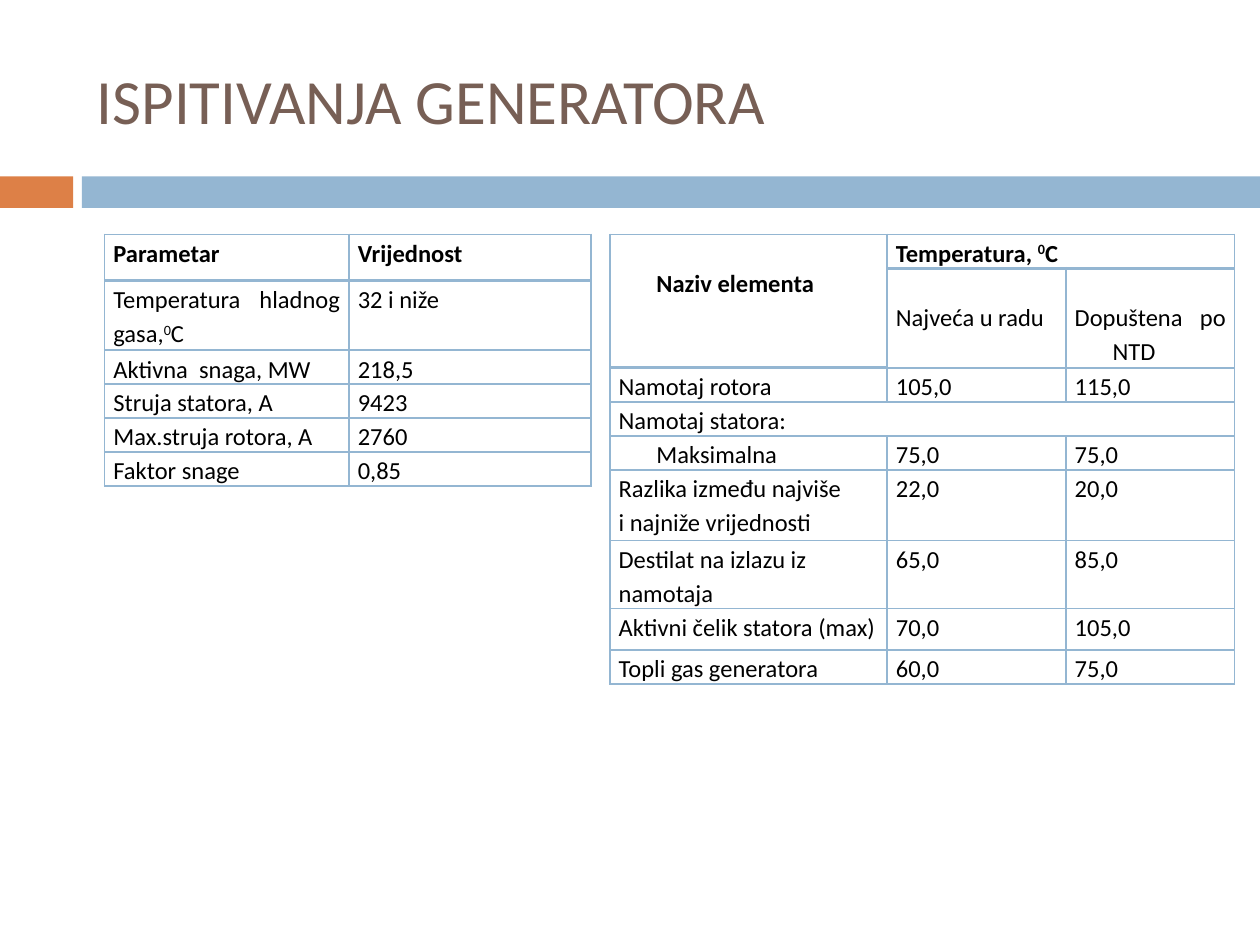
"""Build the slide with two tables of generator test results."""
from lxml import etree
from pptx import Presentation
from pptx.dml.color import RGBColor
from pptx.enum.shapes import MSO_SHAPE
from pptx.enum.text import MSO_ANCHOR, PP_ALIGN
from pptx.oxml.ns import qn
from pptx.util import Inches, Pt

RECTANGLE = MSO_SHAPE.RECTANGLE
MIDDLE = MSO_ANCHOR.MIDDLE
LEFT, JUSTIFY = PP_ALIGN.LEFT, PP_ALIGN.JUSTIFY
ORANGE = RGBColor(0xDD, 0x80, 0x47)
BLUE = RGBColor(0x94, 0xB6, 0xD2)
BROWN = RGBColor(0x77, 0x5F, 0x55)
BLACK = RGBColor(0, 0, 0)
FONT = "Calibri"

PARAMETERS = [
    ["Parametar", "Vrijednost"],
    ["Temperatura hladnog gasa,^0^C", "32 i niže"],
    ["Aktivna  snaga, MW", "218,5"],
    ["Struja statora, A", "9423"],
    ["Max.struja rotora, A", "2760"],
    ["Faktor snage", "0,85"],
]
TEMPERATURES = [
    ["Naziv elementa", "Temperatura, ^0^C", ""],
    ["", "Najveća u radu", "Dopuštena po NTD"],
    ["Namotaj rotora", "105,0", "115,0"],
    ["Namotaj statora:", "", ""],
    ["Maksimalna", "75,0", "75,0"],
    ["Razlika između najviše\ni najniže vrijednosti", "22,0", "20,0"],
    ["Destilat na izlazu iz namotaja", "65,0", "85,0"],
    ["Aktivni čelik statora (max)", "70,0", "105,0"],
    ["Topli gas generatora", "60,0", "75,0"],
]
INDENTED = {"Naziv elementa", "Maksimalna"}
LOWERED = {"Naziv elementa", "Najveća u radu", "Dopuštena po NTD"}
LEFT_ALIGNED = {TEMPERATURES[5][0], TEMPERATURES[6][0]}
UNINDENTED = LEFT_ALIGNED | {PARAMETERS[1][0]}


def write_cell(cell, text, bold, border_widths):
    properties = cell._tc.get_or_add_tcPr()
    for side, width in zip("LRTB", border_widths):
        line = etree.SubElement(properties, qn(f"a:ln{side}"), w=str(Pt(width)))
        line_fill = etree.SubElement(line, qn("a:solidFill"))
        etree.SubElement(line_fill, qn("a:srgbClr"), val=str(BLUE))
    cell.fill.background()
    cell.margin_left = cell.margin_right = Inches(0.07)
    cell.margin_top = Inches(0.24 if text in LOWERED else 0)
    cell.margin_bottom = 0
    if not text:
        return
    cell.text_frame.text = text.replace("^", "")
    for paragraph, content in zip(cell.text_frame.paragraphs, text.split("\n")):
        paragraph.alignment = LEFT if text in LEFT_ALIGNED else JUSTIFY
        paragraph.line_spacing = 1.15
        if text not in UNINDENTED:
            indent = 0 if text in INDENTED else Inches(-0.3)
            paragraph_properties = paragraph._p.get_or_add_pPr()
            paragraph_properties.set("marL", str(Inches(0.3)))
            paragraph_properties.set("indent", str(indent))
        paragraph.clear()
        for index, part in enumerate(content.split("^")):
            run = paragraph.add_run()
            run.text = part
            run.font.name = FONT
            run.font.size = Pt(14)
            run.font.bold = bold
            run.font.color.rgb = BLACK
            if index % 2:
                run._r.get_or_add_rPr().set("baseline", "30000")


def add_grid(slide, left, widths, heights, rows, headers, merges):
    frame = slide.shapes.add_table(
        len(rows), len(widths), Inches(left), Inches(1.86),
        Inches(sum(widths)), Inches(sum(heights)))
    table = frame.table
    table.first_row = table.horz_banding = False
    for column, width in zip(table.columns, widths):
        column.width = Inches(width)
    for row, height in zip(table.rows, heights):
        row.height = Inches(height)
    for first, last in merges:
        table.cell(*first).merge(table.cell(*last))
    for row, texts in enumerate(rows):
        for column, text in enumerate(texts):
            is_header = (row, column) in headers
            top = 2 if (row - 1, column) in headers else 1
            bottom = 2 if is_header else 1
            write_cell(table.cell(row, column), text, is_header, (1, 1, top, bottom))


presentation = Presentation()
presentation.slide_width = Inches(10)
presentation.slide_height = Inches(7.5)
slide = presentation.slides.add_slide(presentation.slide_layouts[6])

for left, width, color in [(0, 0.58, ORANGE), (0.65, 9.35, BLUE)]:
    band = slide.shapes.add_shape(
        RECTANGLE, Inches(left), Inches(1.4), Inches(width), Inches(0.25))
    band.shadow.inherit = False
    band.fill.solid()
    band.fill.fore_color.rgb = color
    band.line.fill.background()

title = slide.shapes.add_textbox(
    Inches(0.67), Inches(0.25), Inches(8.92), Inches(1.08))
title.text_frame.word_wrap = True
title.text_frame.vertical_anchor = MIDDLE
title.text_frame.text = "ISPITIVANJA GENERATORA"
title_font = title.text_frame.paragraphs[0].runs[0].font
title_font.name = FONT
title_font.size = Pt(36)
title_font.color.rgb = BROWN

add_grid(slide, 0.83, [1.94, 1.92], [0.37, 0.55] + [0.27] * 4,
         PARAMETERS, {(0, 0), (0, 1)}, [])
add_grid(slide, 4.84, [2.2, 1.42, 1.34],
         [0.27, 0.79, 0.27, 0.27, 0.27, 0.56, 0.54, 0.33, 0.27],
         TEMPERATURES, {(0, 0), (1, 0), (0, 1), (0, 2)},
         [((0, 0), (1, 0)), ((0, 1), (0, 2)), ((3, 0), (3, 2))])

presentation.save("out.pptx")
